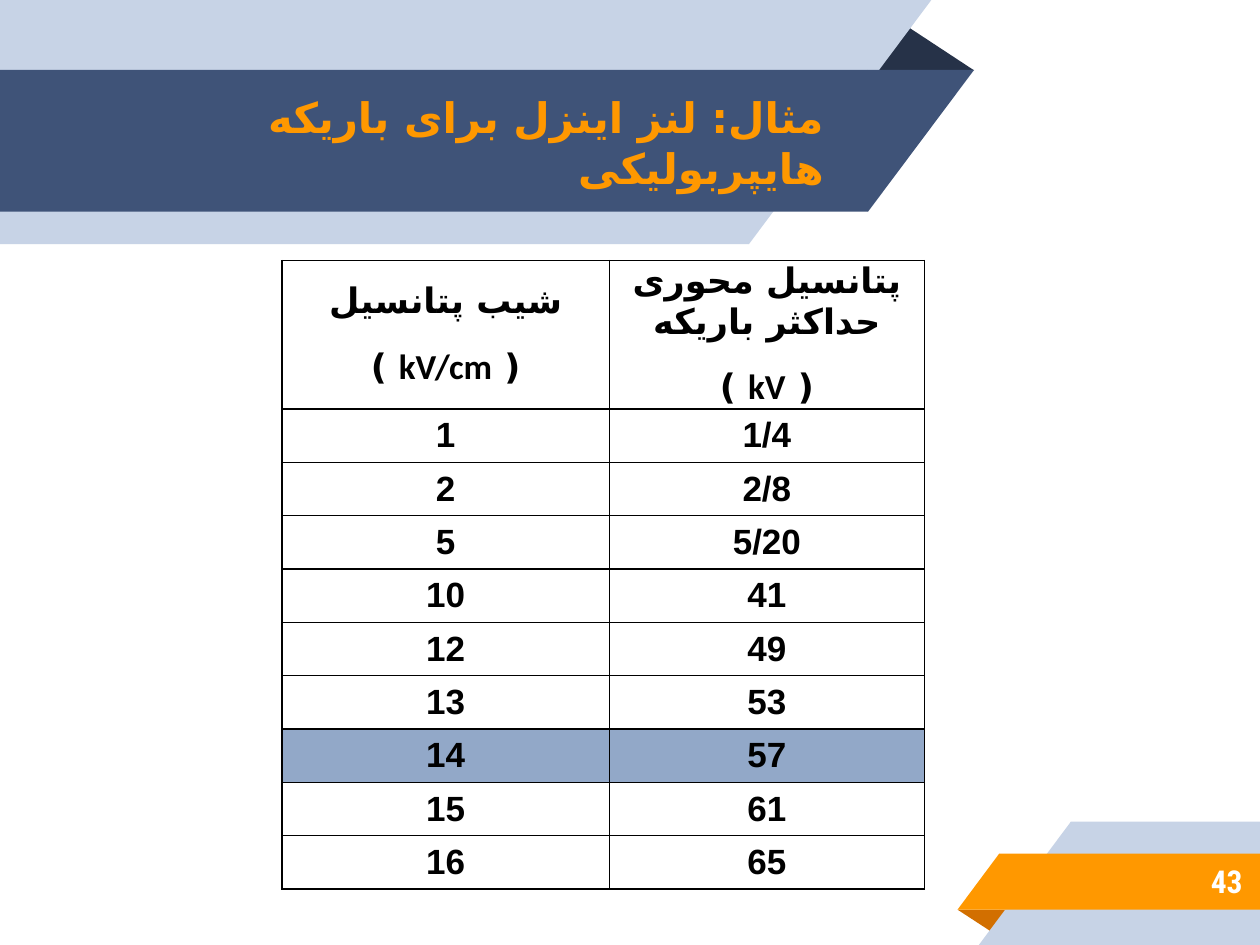
from dataclasses import dataclass
from lxml.etree import SubElement
from pptx import Presentation
from pptx.dml.color import RGBColor
from pptx.enum.shapes import MSO_SHAPE as Shape
from pptx.enum.text import MSO_ANCHOR as Anchor, MSO_AUTO_SIZE as AutoSize, PP_ALIGN as Align
from pptx.oxml.ns import qn
from pptx.util import Pt

TITLE = "مثال: لنز اینزل برای باریکه هایپربولیکی"
PAGE = "43"
ROWS = [
    ("شیب پتانسیل\n( kV/cm )", "پتانسیل محوری حداکثر باریکه\n( kV )"),
    ("1", "1/4"),
    ("2", "2/8"),
    ("5", "5/20"),
    ("10", "41"),
    ("12", "49"),
    ("13", "53"),
    ("14", "57"),
    ("15", "61"),
    ("16", "65"),
]
HIGHLIGHTED = "14"


@dataclass(frozen=True)
class Theme:
    pale: str = "C7D3E6"
    navy: str = "3F5378"
    navy_fold: str = "263248"
    orange: str = "FF9800"
    orange_fold: str = "D26F00"
    highlight: str = "92A8C8"
    ink: str = "000000"
    white: str = "FFFFFF"
    title_font: str = "Lato"
    page_font: str = "Roboto Condensed"
    table_font: str = "Calibri"
    persian_font: str = "DejaVu Sans"
    digit_font: str = "Arial"
    title_size: int = 24
    page_size: int = 18
    table_size: int = 20


THEME = Theme()
SLIDE_WIDTH, SLIDE_HEIGHT = 720, 540
COLUMN_WIDTHS = [187.2, 180]
HEADER_HEIGHT, ROW_HEIGHT = 81.4, 30.5
FOLD_APEX = 0.324


def rgb(color):
    return RGBColor.from_string(color)


def add_piece(slide, preset, box, color, rotation=0, flipped=False):
    piece = slide.shapes.add_shape(preset, *map(Pt, box))
    piece.shadow.inherit = False
    piece.fill.solid()
    piece.fill.fore_color.rgb = rgb(color)
    piece.line.fill.background()
    piece.rotation = rotation
    if flipped:
        piece._element.spPr.find(qn("a:xfrm")).set("flipH", "1")
    return piece


def add_fold(slide, box, color, rotation=0):
    add_piece(slide, Shape.ISOSCELES_TRIANGLE, box, color, rotation).adjustments[0] = FOLD_APEX


def add_left_band(slide, top, height, edge, slant, color):
    add_piece(slide, Shape.RECTANGLE, (0, top, edge, height), color)
    add_piece(slide, Shape.RIGHT_TRIANGLE, (edge, top, slant, height), color, 180, True)


def add_right_band(slide, top, height, edge, slant, color):
    add_piece(slide, Shape.RECTANGLE, (edge, top, SLIDE_WIDTH - edge, height), color)
    add_piece(slide, Shape.RIGHT_TRIANGLE, (edge - slant, top, slant, height), color, 0, True)


def style_runs(paragraph, font_name, script_font, size, color):
    for run in paragraph.runs:
        run.font.name = font_name
        run.font.size = Pt(size)
        run.font.bold = True
        run.font.color.rgb = rgb(color)
        SubElement(run._r.get_or_add_rPr(), qn("a:cs"), typeface=script_font)


def fill_label(label, text, font_name, script_font, size, color):
    frame = label.text_frame
    frame.text = text
    frame.word_wrap = True
    frame.auto_size = AutoSize.NONE
    frame.vertical_anchor = Anchor.MIDDLE
    frame.margin_left = frame.margin_right = frame.margin_top = frame.margin_bottom = Pt(7.2)
    frame.paragraphs[0].alignment = Align.RIGHT
    style_runs(frame.paragraphs[0], font_name, script_font, size, color)


def add_borders(cell):
    properties = cell._tc.get_or_add_tcPr()
    for position, side in enumerate(("lnL", "lnR", "lnT", "lnB")):
        border = properties.makeelement(qn(f"a:{side}"), {"w": str(Pt(1))})
        fill = SubElement(border, qn("a:solidFill"))
        SubElement(fill, qn("a:srgbClr"), val=THEME.ink)
        properties.insert(position, border)


def fill_cell(cell, text, script_font, highlighted):
    cell.text_frame.text = text
    cell.vertical_anchor = Anchor.MIDDLE
    cell.margin_left = cell.margin_right = Pt(5)
    cell.margin_top = cell.margin_bottom = 0
    for paragraph in cell.text_frame.paragraphs:
        paragraph.alignment = Align.CENTER
        paragraph.line_spacing = 1.15 if paragraph.text.startswith("(") else 1.0
        paragraph.space_after = Pt(10)
        paragraph._p.get_or_add_pPr().set("rtl", "1")
        style_runs(paragraph, THEME.table_font, script_font, THEME.table_size, THEME.ink)
    if highlighted:
        cell.fill.solid()
        cell.fill.fore_color.rgb = rgb(THEME.highlight)
    else:
        cell.fill.background()
    add_borders(cell)


def add_potential_table(slide):
    height = HEADER_HEIGHT + ROW_HEIGHT * (len(ROWS) - 1)
    table = slide.shapes.add_table(
        len(ROWS), len(COLUMN_WIDTHS), Pt(161), Pt(149), Pt(sum(COLUMN_WIDTHS)), Pt(height)
    ).table
    table.first_row = table.horz_banding = False
    for column, width in zip(table.columns, COLUMN_WIDTHS):
        column.width = Pt(width)
    for index, values in enumerate(ROWS):
        table.rows[index].height = Pt(ROW_HEIGHT if index else HEADER_HEIGHT)
        script_font = THEME.digit_font if index else THEME.persian_font
        for column, value in enumerate(values):
            fill_cell(table.cell(index, column), value, script_font, values[0] == HIGHLIGHTED)


def main():
    deck = Presentation()
    deck.slide_width, deck.slide_height = Pt(SLIDE_WIDTH), Pt(SLIDE_HEIGHT)
    slide = deck.slides.add_slide(deck.slide_layouts[5])

    add_fold(slide, (495.4, 13, 61.2, 27.2), THEME.navy_fold)
    add_left_band(slide, 0, 139.5, 428, 104.2, THEME.pale)
    add_left_band(slide, 40, 81, 496, 60.6, THEME.navy)
    add_fold(slide, (547.2, 519.8, 31, 13.7), THEME.orange_fold, 180)
    add_right_band(slide, 469.5, 70.5, 612, 52.6, THEME.pale)
    add_right_band(slide, 487.8, 32, 571, 23.8, THEME.orange)

    title = slide.shapes.title
    title.left, title.top, title.width, title.height = map(Pt, (0, 41, 478, 80.6))
    fill_label(title, TITLE, THEME.title_font, THEME.persian_font, THEME.title_size, THEME.orange)
    slide.shapes._spTree.append(title._element)

    page = slide.shapes.add_textbox(*map(Pt, (599.8, 486.7, 117.4, 33.1)))
    fill_label(page, PAGE, THEME.page_font, THEME.page_font, THEME.page_size, THEME.white)

    add_potential_table(slide)
    deck.save("out.pptx")


if __name__ == "__main__":
    main()
